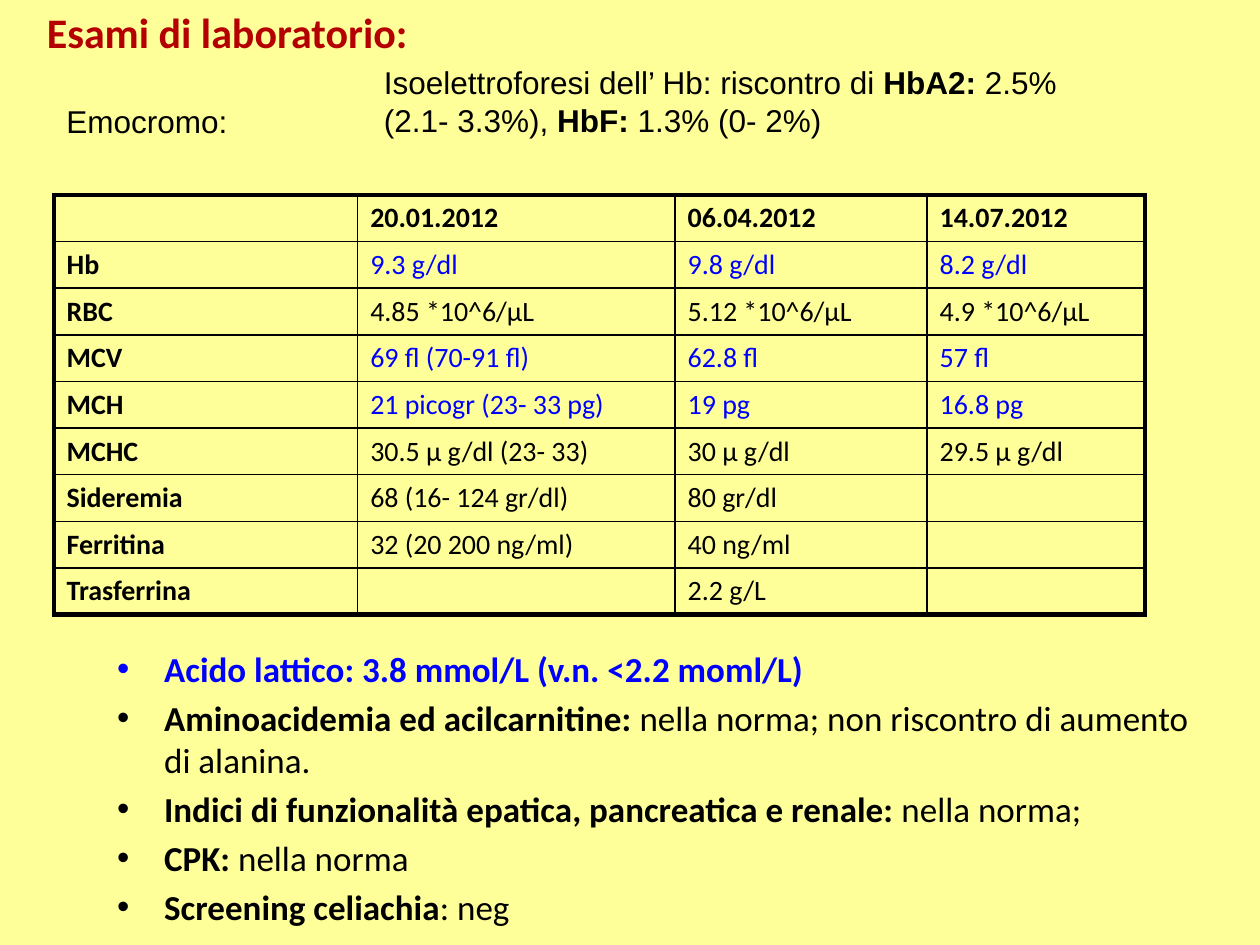
"""Build the laboratory results slide with its blood count table and findings."""
import pptx
import pptx.dml.color
import pptx.enum.text
import pptx.oxml.ns
import pptx.util
from lxml import etree
from pptx.util import Cm

BLACK, BLUE, RED, YELLOW = "000000", "0000FF", "B40000", "FFFF99"
HEADINGS = ["", "20.01.2012", "06.04.2012", "14.07.2012"]
RESULTS = [
    ["Hb", "9.3 g/dl", "9.8 g/dl", "8.2 g/dl"],
    ["RBC", "4.85 *10^6/μL", "5.12 *10^6/μL", "4.9 *10^6/μL"],
    ["MCV", "69 fl (70-91 fl)", "62.8 fl", "57 fl"],
    ["MCH", "21 picogr (23- 33 pg)", "19 pg", "16.8 pg"],
    ["MCHC", "30.5 μ g/dl (23- 33)", "30 μ g/dl", "29.5 μ g/dl"],
    ["Sideremia", "68 (16- 124 gr/dl)", "80 gr/dl", ""],
    ["Ferritina", "32 (20 200 ng/ml)", "40 ng/ml", ""],
    ["Trasferrina", "", "2.2 g/L", ""],
]
ABNORMAL = {"Hb", "MCV", "MCH"}
FINDINGS = [
    [("Acido lattico: 3.8 mmol/L (v.n. <2.2 moml/L)", True, BLUE)],
    [("Aminoacidemia ed acilcarnitine:", True),
     (" nella norma; non riscontro di aumento di alanina.", False)],
    [("Indici di funzionalità epatica, pancreatica e renale:", True),
     (" nella norma;", False)],
    [("CPK:", True), (" nella norma", False)],
    [("Screening celiachia", True), (": neg", False)],
]
ELECTROPHORESIS = [
    ("Isoelettroforesi dell’ Hb: riscontro di ", False), ("HbA2: ", True),
    ("2.5% (2.1- 3.3%), ", False), ("HbF:", True), (" 1.3% (0- 2%)", False),
]


def color(value):
    """Turn a hex string into a colour."""
    return pptx.dml.color.RGBColor.from_string(value)


def add_element(parent, tag, **attributes):
    """Append a DrawingML element to a parent."""
    return etree.SubElement(parent, pptx.oxml.ns.qn(tag), **attributes)


class LabSlide:
    """Hold the style and the current slide."""

    body_font, note_font = "Calibri", "Arial"
    title_size, finding_size, note_size, cell_size = 24, 20, 18, 16
    thin, thick = 1, 3

    def __init__(self, deck):
        """Add a title-only slide with a plain background."""
        self.slide = deck.slides.add_slide(deck.slide_layouts[5])
        fill = self.slide.background.fill
        fill.solid()
        fill.fore_color.rgb = color(YELLOW)

    def add_spans(self, para, spans, font, size):
        """Add (text, bold, optional colour) spans to a paragraph."""
        for text, bold, *tint in spans:
            span = para.add_run()
            span.text = text
            span.font.name = font
            span.font.size = pptx.util.Pt(size)
            span.font.bold = bold
            span.font.color.rgb = color(tint[0] if tint else BLACK)

    def title(self, text, left, top, width, height):
        """Place and format the title placeholder."""
        box = self.slide.shapes.title
        box.left, box.top, box.width, box.height = left, top, width, height
        frame = box.text_frame
        frame.auto_size = pptx.enum.text.MSO_AUTO_SIZE.NONE
        frame.vertical_anchor = pptx.enum.text.MSO_ANCHOR.TOP
        para = frame.paragraphs[0]
        para.alignment = pptx.enum.text.PP_ALIGN.LEFT
        self.add_spans(para, [(text, True, RED)], self.body_font, self.title_size)

    def text_box(self, left, top, width, height):
        """Add a wrapping text box and return its frame."""
        frame = self.slide.shapes.add_textbox(left, top, width, height).text_frame
        frame.word_wrap = True
        return frame

    def note(self, spans, *place):
        """Add a one-paragraph note."""
        para = self.text_box(*place).paragraphs[0]
        self.add_spans(para, spans, self.note_font, self.note_size)

    def bullets(self, items, *place):
        """Add a bulleted list."""
        frame = self.text_box(*place)
        indent = Cm(0.95)
        for index, spans in enumerate(items):
            para = frame.add_paragraph() if index else frame.paragraphs[0]
            para.space_before = pptx.util.Pt(4 if index else 0)
            properties = para._p.get_or_add_pPr()
            properties.set("marL", str(indent))
            properties.set("indent", str(-indent))
            add_element(properties, "a:buFont", typeface="Arial")
            add_element(properties, "a:buChar", char="•")
            self.add_spans(para, spans, self.body_font, self.finding_size)

    def borders(self, cell, outer_edges):
        """Draw cell borders, thick on the outer edges."""
        properties = cell._tc.get_or_add_tcPr()
        for edge in "LRTB":
            width = self.thick if edge in outer_edges else self.thin
            line = add_element(properties, f"a:ln{edge}", w=str(pptx.util.Pt(width)))
            add_element(add_element(line, "a:solidFill"), "a:srgbClr", val=BLACK)

    def table(self, rows, left, top, column_widths, row_height):
        """Add a framed grid with bold headings and blue abnormal rows."""
        last_row, last_column = len(rows) - 1, len(column_widths) - 1
        table = self.slide.shapes.add_table(
            len(rows), len(column_widths), left, top,
            sum(column_widths), row_height * len(rows)).table
        table.first_row = table.horz_banding = False
        for column, width in zip(table.columns, column_widths):
            column.width = width
        for r, values in enumerate(rows):
            table.rows[r].height = row_height
            for c, text in enumerate(values):
                cell = table.cell(r, c)
                sides = {"L": c == 0, "R": c == last_column,
                         "T": r == 0, "B": r == last_row}
                self.borders(cell, [edge for edge, outer in sides.items() if outer])
                cell.fill.background()
                para = cell.text_frame.paragraphs[0]
                tint = BLUE if c and values[0] in ABNORMAL else BLACK
                if text:
                    self.add_spans(para, [(text, r == 0 or c == 0, tint)],
                                   self.body_font, self.cell_size)
                else:
                    end = add_element(para._p, "a:endParaRPr",
                                      sz=str(self.cell_size * 100))
                    add_element(end, "a:latin", typeface=self.body_font)


def main():
    """Assemble and save the deck."""
    deck = pptx.Presentation()
    deck.slide_width, deck.slide_height = Cm(25.4), Cm(19.05)
    page = LabSlide(deck)
    page.title("Esami di laboratorio:", Cm(0.69), Cm(0), Cm(12.4), Cm(2.79))
    page.note([("Emocromo:", False)], Cm(1.09), Cm(1.93), Cm(8.81), Cm(1.02))
    widths = [Cm(6.12), Cm(6.4), Cm(5.08), Cm(4.39)]
    page.table([HEADINGS] + RESULTS, Cm(1.09), Cm(3.93), widths, Cm(0.94))
    page.note(ELECTROPHORESIS, Cm(7.49), Cm(1.14), Cm(14.2), Cm(1.78))
    page.bullets(FINDINGS, Cm(2.11), Cm(12.93), Cm(22.4), Cm(3.99))
    deck.save("out.pptx")


if __name__ == "__main__":
    main()
